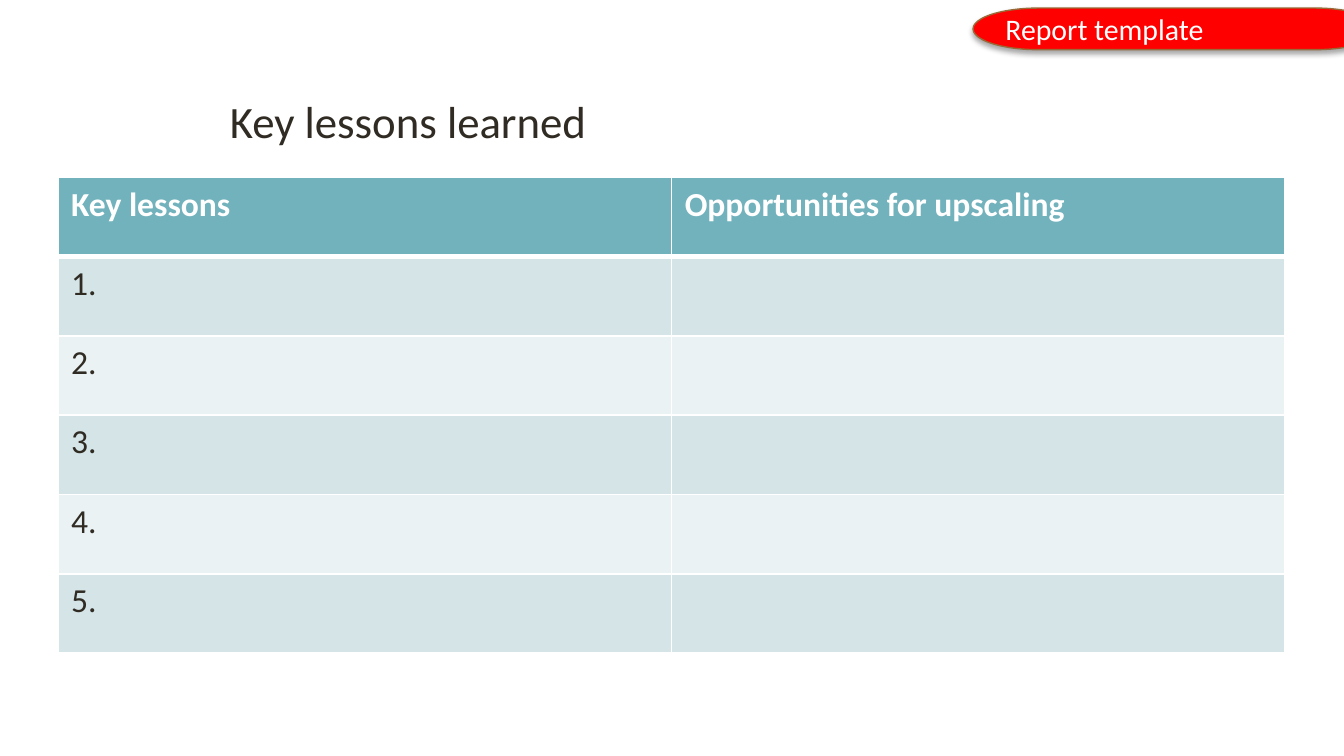
from dataclasses import dataclass

from lxml.etree import SubElement
from pptx import Presentation
from pptx.dml.color import RGBColor as RGB
from pptx.enum.shapes import MSO_SHAPE as SHAPE
from pptx.enum.text import MSO_ANCHOR as ANCHOR, PP_ALIGN as ALIGN
from pptx.oxml.ns import qn
from pptx.util import Inches, Pt


@dataclass(frozen=True)
class Theme:
    font: str = "Calibri"
    ink: str = "302C24"
    white: str = "FFFFFF"
    header: str = "71B2BC"
    bands: tuple = ("D5E4E7", "EBF2F3")
    badge: str = "FF0000"
    badge_line: str = "996937"
    title_size: int = 24
    table_size: int = 18
    badge_size: int = 16


THEME = Theme()
ROWS = [("Key lessons", "Opportunities for upscaling")]
ROWS += [(f"{number}.", "") for number in range(1, 6)]


def style_text(p, size, color, bold=False):
    p.alignment = ALIGN.LEFT
    for r in p.runs:
        r.font.name = THEME.font
        r.font.size = Pt(size)
        r.font.bold = bold
        r.font.color.rgb = RGB.from_string(color)


def add_title(s, text):
    title = s.shapes.title
    title.left, title.top = Inches(1.61), Inches(0.69)
    title.width, title.height = Inches(7.62), Inches(0.63)
    tf = title.text_frame
    tf.text = text
    tf.word_wrap = True
    tf.vertical_anchor = ANCHOR.TOP
    p = tf.paragraphs[0]
    p.line_spacing = 0.9
    style_text(p, THEME.title_size, THEME.ink)


def set_borders(cell, bottom):
    # Borders must come before the fill in the cell properties
    tc_pr = cell._tc.get_or_add_tcPr()
    for side, width in (("L", 1), ("R", 1), ("T", 1), ("B", bottom)):
        line = SubElement(tc_pr, qn(f"a:ln{side}"), w=str(Pt(width)))
        fill = SubElement(line, qn("a:solidFill"))
        SubElement(fill, qn("a:srgbClr"), val=THEME.white)


def add_lessons_table(s, rows):
    frame = s.shapes.add_table(len(rows), len(rows[0]), Inches(0.43),
                               Inches(1.32), Inches(9.13), Inches(3.54))
    for i, row in enumerate(rows):
        is_header = i == 0
        fill = THEME.header if is_header else THEME.bands[(i - 1) % 2]
        color = THEME.white if is_header else THEME.ink
        for j, text in enumerate(row):
            cell = frame.table.cell(i, j)
            set_borders(cell, bottom=3 if is_header else 1)
            cell.fill.solid()
            cell.fill.fore_color.rgb = RGB.from_string(fill)
            cell.text = text
            style_text(cell.text_frame.paragraphs[0], THEME.table_size,
                       color, bold=is_header)


def add_shadow(shape):
    shape.shadow.inherit = False
    effects = shape._element.spPr.find(qn("a:effectLst"))
    shadow = SubElement(effects, qn("a:outerShdw"), blurRad=str(Pt(3.1)),
                        dist=str(Pt(1.8)), dir="5400000", rotWithShape="0")
    color = SubElement(shadow, qn("a:srgbClr"), val="000000")
    SubElement(color, qn("a:alpha"), val="35000")


def add_badge(s, text):
    badge = s.shapes.add_shape(SHAPE.FLOWCHART_TERMINATOR, Inches(7.24),
                               Inches(0.06), Inches(3.03), Inches(0.31))
    badge.fill.solid()
    badge.fill.fore_color.rgb = RGB.from_string(THEME.badge)
    badge.line.color.rgb = RGB.from_string(THEME.badge_line)
    badge.line.width = Pt(0.75)
    add_shadow(badge)
    tf = badge.text_frame
    tf.text = text
    tf.vertical_anchor = ANCHOR.MIDDLE
    style_text(tf.paragraphs[0], THEME.badge_size, THEME.white)


def main():
    # Widescreen 16:9 page
    prs = Presentation()
    prs.slide_width, prs.slide_height = Inches(10), Inches(10 * 9 / 16)
    s = prs.slides.add_slide(prs.slide_layouts[5])

    # Heading, table of lessons and corner badge
    add_title(s, "Key lessons learned")
    add_lessons_table(s, ROWS)
    add_badge(s, "Report template")

    prs.save("out.pptx")


if __name__ == "__main__":
    main()
